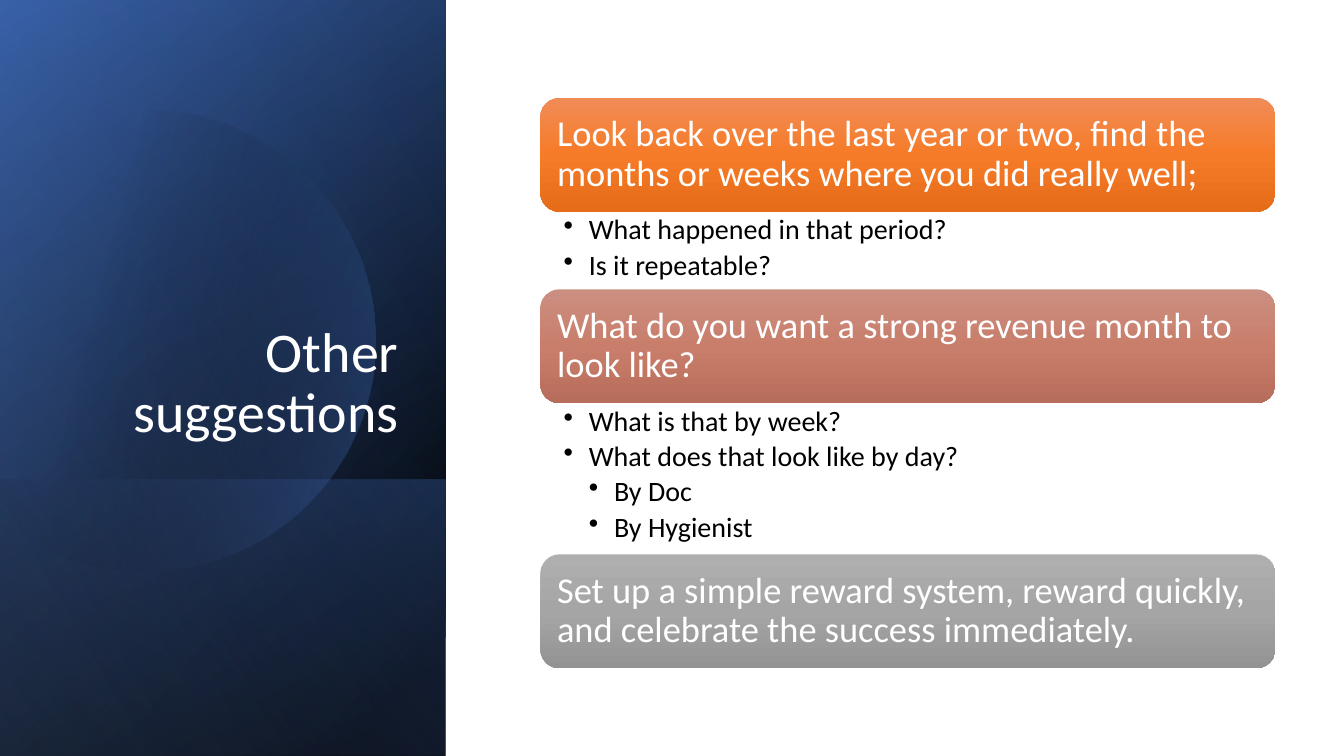
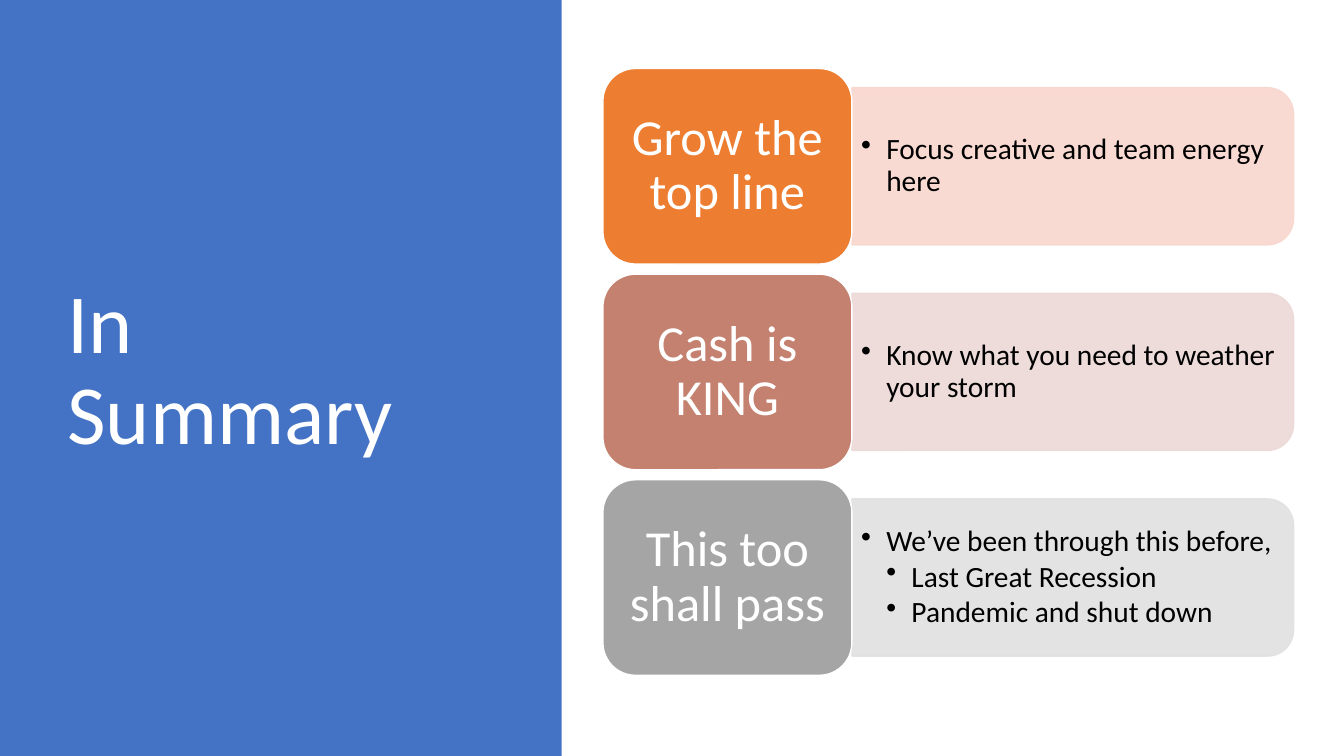
"""Build two slides that pair a title panel with a column of cards."""
from dataclasses import dataclass
from math import acos, cos, sin
from typing import NamedTuple

from lxml.etree import SubElement
from pptx import Presentation
from pptx.dml.color import RGBColor
from pptx.enum.shapes import MSO_SHAPE
from pptx.enum.text import MSO_ANCHOR, PP_ALIGN
from pptx.oxml.ns import qn
from pptx.shapes.autoshape import Shape
from pptx.slide import Slide
from pptx.text.text import TextFrame
from pptx.util import Emu, Pt

PX = 9144
FONT = "Calibri"
INDENT = 25

RECT = MSO_SHAPE.RECTANGLE
ROUND = MSO_SHAPE.ROUNDED_RECTANGLE
TAB = MSO_SHAPE.ROUND_2_SAME_RECTANGLE
TOP, MIDDLE, BOTTOM = MSO_ANCHOR.TOP, MSO_ANCHOR.MIDDLE, MSO_ANCHOR.BOTTOM
LEFT, CENTER, RIGHT = PP_ALIGN.LEFT, PP_ALIGN.CENTER, PP_ALIGN.RIGHT

WHITE = RGBColor(0xFF, 0xFF, 0xFF)
BLACK = RGBColor(0x00, 0x00, 0x00)
BLUE = RGBColor(0x44, 0x72, 0xC4)
NAVY = RGBColor(0x2F, 0x55, 0x97)
SKY = RGBColor(0x8F, 0xAA, 0xDC)
ORANGE = RGBColor(0xED, 0x7D, 0x31)
CLAY = RGBColor(0xC4, 0x81, 0x70)
GRAY = RGBColor(0xA5, 0xA5, 0xA5)
PEACH = RGBColor(0xF8, 0xD7, 0xCE)
ROSE = RGBColor(0xED, 0xD9, 0xD7)
PALE = RGBColor(0xE1, 0xE1, 0xE1)
ORANGES = (RGBColor(0xF1, 0x8C, 0x57), RGBColor(0xF6, 0x7B, 0x28), RGBColor(0xE5, 0x6C, 0x19))
CLAYS = (RGBColor(0xCB, 0x8F, 0x81), RGBColor(0xC9, 0x7E, 0x6B), RGBColor(0xB7, 0x6D, 0x5B))
GRAYS = (RGBColor(0xAF, 0xAF, 0xAF), GRAY, RGBColor(0x93, 0x93, 0x93))


class Box(NamedTuple):
    left: int
    top: int
    width: int
    height: int


class Stop(NamedTuple):
    place: int
    color: RGBColor
    alpha: int = 100


class Item(NamedTuple):
    text: str
    level: int = 1


@dataclass(frozen=True)
class Style:
    size: int
    color: RGBColor = WHITE
    align: PP_ALIGN = LEFT
    anchor: MSO_ANCHOR = MIDDLE
    inset: tuple[int, int, int, int] = (10, 5, 10, 5)
    after: float = 0


@dataclass(frozen=True)
class Panel:
    box: Box
    angle: int
    stops: tuple[Stop, ...]


@dataclass(frozen=True)
class Step:
    text: str
    colors: tuple[RGBColor, ...]
    items: tuple[Item, ...] = ()
    depth: int = 0


@dataclass(frozen=True)
class Point:
    text: str
    color: RGBColor
    tint: RGBColor
    items: tuple[Item, ...]


SIDE = Box(0, 0, 442, 750)
BACK = (
    Panel(SIDE, 50, (Stop(8, BLACK), Stop(100, NAVY))),
    Panel(SIDE, 30, (Stop(0, BLACK, 0), Stop(99, BLUE, 46))),
    Panel(Box(0, 476, 442, 274), 130, (Stop(2, BLUE, 29), Stop(100, BLACK, 30))),
)
SHEEN = Panel(SIDE, 120, (Stop(0, BLACK, 0), Stop(99, SKY, 11)))
GLOW = (Stop(29, BLACK, 0), Stop(100, BLUE, 43))

STEPS = (
    Step("Look back over the last year or two, find the months or weeks where you did really well;",
         ORANGES, (Item("What happened in that period?"), Item("Is it repeatable?")), 77),
    Step("What do you want a strong revenue month to look like?", CLAYS,
         (Item("What is that by week?"), Item("What does that look like by day?"),
          Item("By Doc", 2), Item("By Hygienist", 2)), 150),
    Step("Set up a simple reward system, reward quickly, and celebrate the success immediately.", GRAYS),
)
POINTS = (
    Point("Grow the top line", ORANGE, PEACH, (Item("Focus creative and team energy here"),)),
    Point("Cash is KING", CLAY, ROSE, (Item("Know what you need to weather your storm"),)),
    Point("This too shall pass", GRAY, PALE,
          (Item("We’ve been through this before,"), Item("Last Great Recession", 2),
           Item("Pandemic and shut down", 2))),
)

STEP_HEAD = Style(26, inset=(11, 11, 11, 11))
STEP_LIST = Style(20, BLACK, anchor=TOP, inset=(23, 4, 20, 4), after=3.6)
POINT_HEAD = Style(36, align=CENTER, inset=(15, 7, 15, 7))
POINT_LIST = Style(21, BLACK, inset=(9, 4, 9, 4), after=2.8)


def px(count: int) -> Emu:
    """Turn px into EMU."""
    return Emu(count * PX)


def write(frame: TextFrame, items: tuple[Item, ...], style: Style) -> None:
    """Fill a frame with text, with a bullet on each item of level 1 or more."""
    frame.word_wrap = True
    frame.vertical_anchor = style.anchor
    (frame.margin_left, frame.margin_top,
     frame.margin_right, frame.margin_bottom) = map(px, style.inset)
    for index, item in enumerate(items):
        para = frame.add_paragraph() if index else frame.paragraphs[0]
        para.alignment = style.align
        para.line_spacing = 0.9
        para.space_after = Pt(style.after)
        run = para.add_run()
        run.text = item.text
        run.font.name = FONT
        run.font.size = Pt(style.size)
        run.font.color.rgb = style.color
        if item.level:
            props = para._p.get_or_add_pPr()
            props.set("marL", str(px(INDENT * item.level)))
            props.set("indent", str(px(-INDENT)))
            SubElement(props, qn("a:buChar"), char="•")


def add_text(slide: Slide, box: Box, items: tuple[Item, ...], style: Style) -> None:
    """Add a text box."""
    write(slide.shapes.add_textbox(*map(px, box)).text_frame, items, style)


def add_title(slide: Slide, box: Box, text: str, style: Style) -> None:
    """Add the slide title."""
    add_text(slide, box, (Item(text, 0),), style)


def add_shape(slide: Slide, kind: MSO_SHAPE, box: Box) -> Shape:
    """Add a preset shape without line or shadow."""
    shape = slide.shapes.add_shape(kind, *map(px, box))
    shape.shadow.inherit = False
    shape.line.fill.background()
    return shape


def add_turned(slide: Slide, kind: MSO_SHAPE, box: Box) -> Shape:
    """Add a shape turned by 90 degrees that covers the box."""
    shift = (box.width - box.height) // 2
    shape = add_shape(slide, kind, Box(box.left + shift, box.top - shift, box.height, box.width))
    shape.rotation = 90
    return shape


def fill_solid(shape: Shape, color: RGBColor) -> None:
    """Fill a shape with one colour."""
    shape.fill.solid()
    shape.fill.fore_color.rgb = color


def draw_line(shape: Shape, color: RGBColor) -> None:
    """Give a shape a thin line."""
    shape.line.color.rgb = color
    shape.line.width = Pt(1)


def set_alpha(node, alpha: int) -> None:
    """Set the opacity of a colour element in percent."""
    SubElement(node, qn("a:alpha"), val=str(alpha * 1000))


def fill_blend(shape: Shape, stops: tuple[Stop, ...], angle: int) -> None:
    """Fill a shape with a gradient, its angle read clockwise."""
    shape.fill.gradient()
    shape.fill.gradient_angle = 360 - angle
    nodes = shape._element.spPr.find(".//" + qn("a:gsLst"))
    for node in list(nodes):
        nodes.remove(node)
    for stop in stops:
        node = SubElement(nodes, qn("a:gs"), pos=str(stop.place * 1000))
        color = SubElement(node, qn("a:srgbClr"), val=str(stop.color))
        if stop.alpha < 100:
            set_alpha(color, stop.alpha)


def add_panel(slide: Slide, panel: Panel) -> None:
    """Add a turned and flipped gradient panel."""
    shape = add_turned(slide, RECT, panel.box)
    shape._element.spPr.xfrm.set("flipH", "1")
    fill_blend(shape, panel.stops, panel.angle)


def add_disc(slide: Slide) -> None:
    """Add the glowing disc, cut off at the left edge of the slide."""
    mid_x, mid_y, radius, count = 143, 338, 229, 90
    end = acos(-mid_x / radius)
    turns = [end * (2 * index / count - 1) for index in range(count + 1)]
    dots = [(px(round(mid_x + radius * cos(turn), 2)), px(round(mid_y + radius * sin(turn), 2)))
            for turn in turns]
    path = slide.shapes.build_freeform(*dots[0])
    path.add_line_segments(dots[1:], close=True)
    disc = path.convert_to_shape()
    disc.shadow.inherit = False
    disc.line.fill.background()
    fill_blend(disc, GLOW, 14)


def build_steps(slide: Slide) -> None:
    """Draw the suggestions slide."""
    for panel in BACK:
        add_panel(slide, panel)
    add_disc(slide)
    add_panel(slide, SHEEN)
    add_title(slide, Box(64, 184, 341, 262), "Other suggestions",
              Style(40, align=RIGHT, anchor=BOTTOM))
    left, top, width, height = 536, 97, 729, 113
    for step in STEPS:
        card = add_shape(slide, ROUND, Box(left, top, width, height))
        fill_blend(card, tuple(Stop(50 * i, color) for i, color in enumerate(step.colors)), 90)
        write(card.text_frame, (Item(step.text, 0),), STEP_HEAD)
        top += height
        if step.items:
            add_text(slide, Box(left, top, width, step.depth), step.items, STEP_LIST)
        top += step.depth


def build_points(slide: Slide) -> None:
    """Draw the summary slide."""
    fill_solid(add_shape(slide, RECT, Box(0, 0, 557, 750)), BLUE)
    add_title(slide, Box(57, 68, 416, 602), "In Summary", Style(60))
    left, width, height, pitch = 598, 247, 194, 204
    edge = left + width
    for index, point in enumerate(POINTS):
        top = 68 + index * pitch
        mid = top + height // 2
        bar = add_turned(slide, TAB, Box(edge, mid - 78, 438, 156))
        fill_solid(bar, point.tint)
        draw_line(bar, point.tint)
        for node in bar._element.spPr.iter(qn("a:srgbClr")):
            set_alpha(node, 90)
        add_text(slide, Box(edge, mid - 70, 431, 140), point.items, POINT_LIST)
        card = add_shape(slide, ROUND, Box(left, top, width, height))
        fill_solid(card, point.color)
        draw_line(card, WHITE)
        write(card.text_frame, (Item(point.text, 0),), POINT_HEAD)


def main() -> None:
    """Build and save the deck."""
    deck = Presentation()
    deck.slide_width, deck.slide_height = px(1333), px(750)
    for build in (build_steps, build_points):
        build(deck.slides.add_slide(deck.slide_layouts[6]))
    deck.save("out.pptx")


if __name__ == "__main__":
    main()
